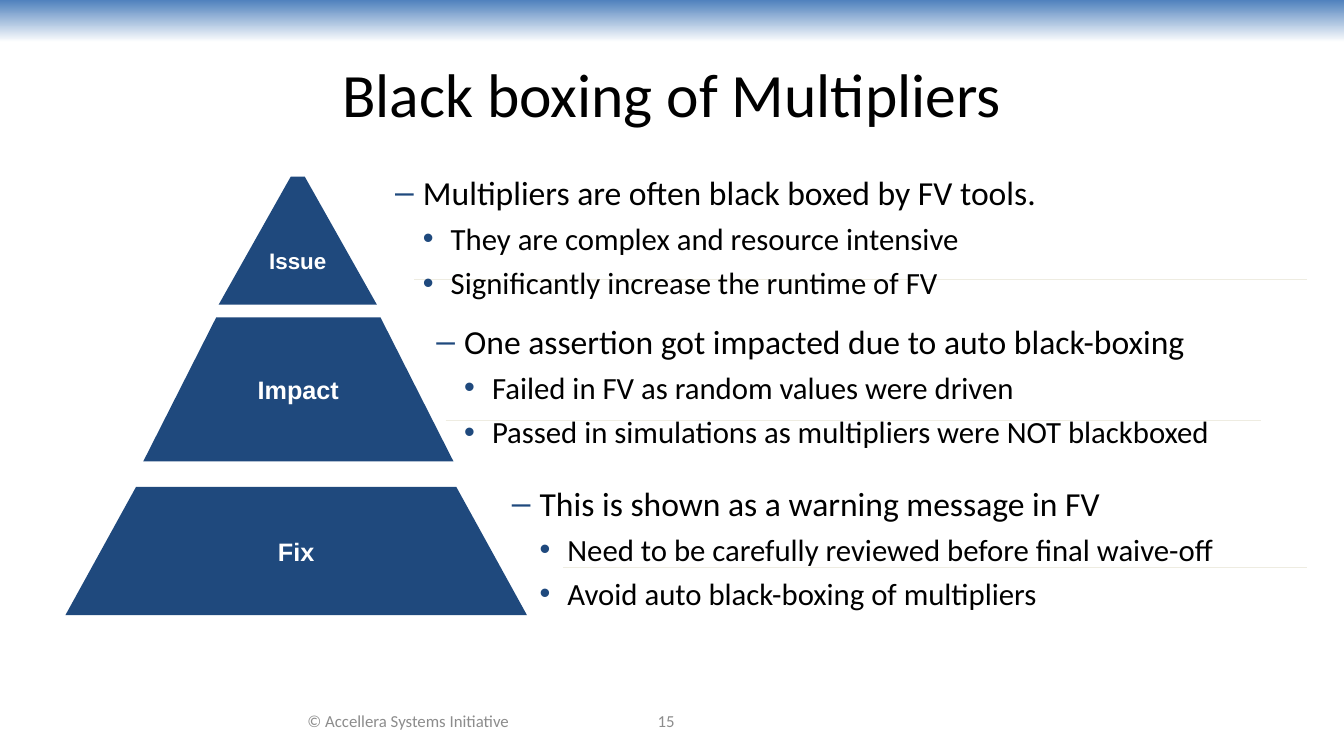
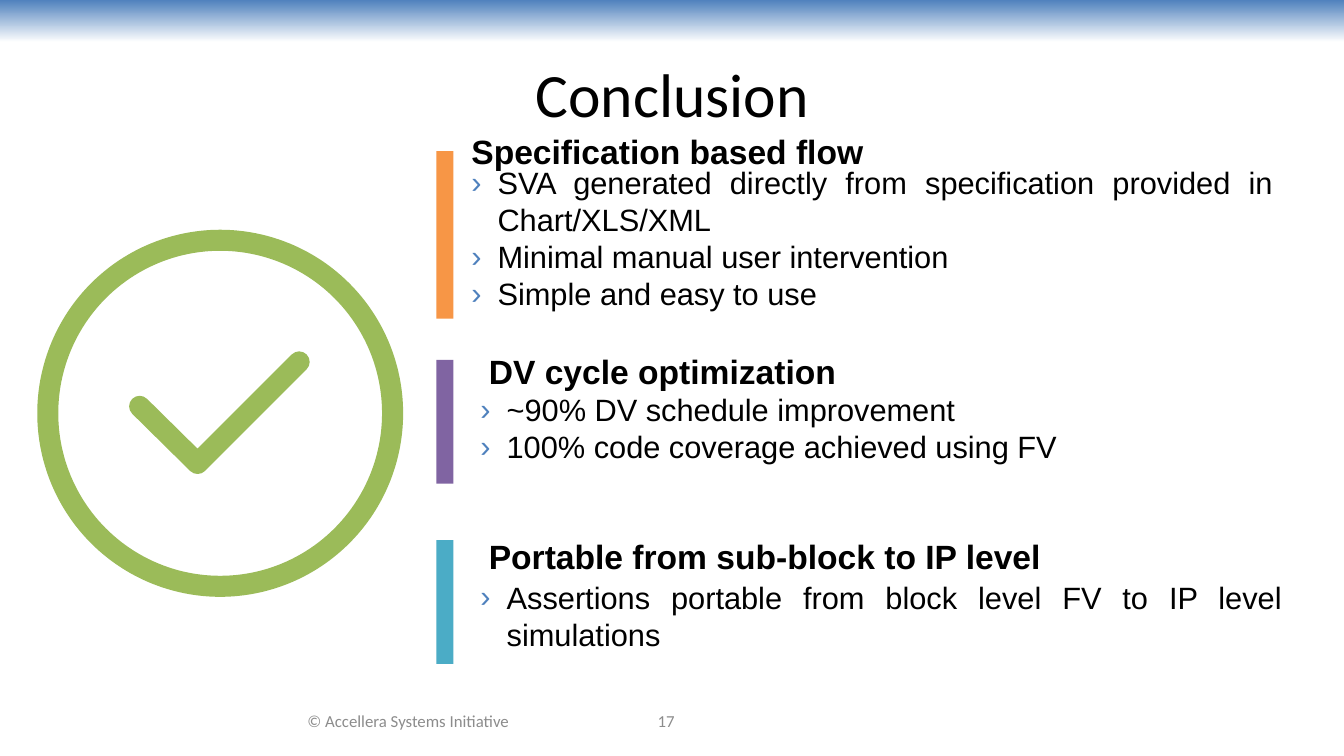
from lxml.etree import SubElement
from pptx import Presentation
from pptx.dml.color import RGBColor
from pptx.enum.shapes import MSO_CONNECTOR, MSO_SHAPE
from pptx.enum.text import MSO_ANCHOR as Anchor, PP_ALIGN as Align
from pptx.oxml.ns import qn
from pptx.util import Cm, Pt

BLACK = RGBColor(0x00, 0x00, 0x00)
WHITE = RGBColor(0xFF, 0xFF, 0xFF)
GREY = RGBColor(0x8C, 0x8C, 0x8C)
NAVY = RGBColor(0x1F, 0x49, 0x7D)
BLUE = RGBColor(0x4F, 0x81, 0xBD)
CREAM = RGBColor(0xEE, 0xEC, 0xE1)
GREEN = RGBColor(0x9B, 0xBB, 0x59)
ORANGE = RGBColor(0xF7, 0x96, 0x46)
PURPLE = RGBColor(0x80, 0x64, 0xA2)
TEAL = RGBColor(0x4B, 0xAC, 0xC6)

SLIDE_WIDTH, SLIDE_HEIGHT = 33.87, 19.05
HEADING_FONT, BODY_FONT = "Calibri", "Arial"

# Pyramid tiers: label, size, box, side inset, label centred on the whole tier
TIERS = [
    ("Issue", 16, (5.51, 4.45, 3.99, 3.23), 1.82, False),
    ("Impact", 18, (3.61, 8.0, 7.82, 3.63), 1.84, True),
    ("Fix", 18, (1.65, 12.27, 11.63, 3.23), 1.78, True),
]
# Rules behind the notes: left, right, height on the slide
RULES = [(10.44, 32.94, 7.04), (11.23, 31.78, 10.59), (14.2, 32.94, 14.3)]
# Notes: box, lead line, details
NOTES = [
    ((9.96, 4.24, 23.09, 3.23), "Multipliers are often black boxed by FV tools.",
     ["They are complex and resource intensive",
      "Significantly increase the runtime of FV"]),
    ((11.0, 8.0, 21.39, 3.23), "One assertion got impacted due to auto black-boxing",
     ["Failed in FV as random values were driven",
      "Passed in simulations as multipliers were NOT blackboxed"]),
    ((12.9, 12.07, 18.9, 3.23), "This is shown as a warning message in FV",
     ["Need to be carefully reviewed before final waive-off",
      "Avoid auto black-boxing of multipliers"]),
]
# Conclusions: bar box, colour, heading offset, list offset, heading, points
CONCLUSIONS = [
    ((11.0, 3.81, 0.43, 4.22), ORANGE, (0.63, -0.63), (0.63, 0.2),
     "Specification based flow",
     ["SVA generated directly from specification provided in Chart/XLS/XML",
      "Minimal manual user intervention", "Simple and easy to use"]),
    ((11.0, 9.07, 0.43, 3.12), PURPLE, (1.07, -0.36), (0.86, 0.66),
     "DV cycle optimization",
     ["~90% DV schedule improvement", "100% code coverage achieved using FV"]),
    ((11.0, 13.61, 0.43, 3.12), TEAL, (1.07, -0.22), (0.86, 0.84),
     "Portable from sub-block to IP level",
     ["Assertions portable from block level FV to IP level simulations"]),
]


def cm_box(box):
    return [Cm(length) for length in box]


def set_font(paragraph, name, size, color, bold=False):
    font = paragraph.font
    font.name, font.size, font.bold = name, Pt(size), bold
    font.color.rgb = color


def set_bullet(paragraph, character, color, indent, hanging):
    properties = paragraph._p.get_or_add_pPr()
    properties.set("marL", str(Cm(indent)))
    properties.set("indent", str(-Cm(hanging)))
    bullet_color = SubElement(properties, qn("a:buClr"))
    SubElement(bullet_color, qn("a:srgbClr")).set("val", str(color))
    SubElement(properties, qn("a:buFont")).set("typeface", BODY_FONT)
    SubElement(properties, qn("a:buChar")).set("char", character)


def add_frame(slide, box, anchor=Anchor.TOP):
    frame = slide.shapes.add_textbox(*cm_box(box)).text_frame
    frame.word_wrap = True
    frame.vertical_anchor = anchor
    return frame


def remove_margins(frame):
    frame.margin_left = frame.margin_right = 0
    frame.margin_top = frame.margin_bottom = 0


def add_paragraphs(frame, texts):
    """Write one paragraph per text and yield each for styling."""
    for index, text in enumerate(texts):
        paragraph = frame.add_paragraph() if index else frame.paragraphs[0]
        paragraph.text = text
        yield paragraph


def add_line_of_text(slide, box, text, style, align=Align.LEFT, anchor=Anchor.TOP):
    paragraph = add_frame(slide, box, anchor).paragraphs[0]
    paragraph.text = text
    paragraph.alignment = align
    set_font(paragraph, *style)


def add_filled(slide, preset, box, color):
    shape = slide.shapes.add_shape(preset, *cm_box(box))
    shape.shadow.inherit = False
    shape.fill.solid()
    shape.fill.fore_color.rgb = color
    shape.line.fill.background()
    return shape


def add_base_slide(presentation, title, number):
    """Blank slide with the top band, title and footer."""
    slide = presentation.slides.add_slide(presentation.slide_layouts[6])
    band = add_filled(slide, MSO_SHAPE.RECTANGLE, (0, 0, SLIDE_WIDTH, 1.07), BLUE)
    band.fill.gradient()
    band.fill.gradient_angle = 270
    for stop, color in zip(band.fill.gradient_stops, (BLUE, WHITE)):
        stop.color.rgb = color
    band.fill.gradient_stops[0].position = 0
    band.fill.gradient_stops[1].position = 1

    for box, text, size, color in [
        ((1.7, 0.76, 30.48, 3.18), title, 44, BLACK),
        ((13.54, 17.65, 6.5, 1.02), str(number), 12, GREY),
        ((6.2, 17.65, 8.18, 1.02), "© Accellera Systems Initiative", 12, GREY),
    ]:
        add_line_of_text(slide, box, text, (HEADING_FONT, size, color),
                         Align.CENTER, Anchor.MIDDLE)
    return slide


def add_tier(slide, label, size, box, inset, centred):
    width, height = box[2:]
    tier = add_filled(slide, MSO_SHAPE.TRAPEZOID, box, NAVY)
    tier.adjustments[0] = inset / min(width, height)
    frame = tier.text_frame
    remove_margins(frame)
    frame.word_wrap = False
    frame.vertical_anchor = Anchor.MIDDLE
    if centred:
        # Balance the top offset of the trapezoid's text area
        frame.margin_bottom = Cm(height * 2 * inset / width / 3)
    paragraph = frame.paragraphs[0]
    paragraph.text = label
    paragraph.alignment = Align.CENTER
    set_font(paragraph, BODY_FONT, size, WHITE, True)


def add_rule(slide, left, right, top):
    rule = slide.shapes.add_connector(MSO_CONNECTOR.STRAIGHT,
                                      *cm_box((left, top, right, top)))
    rule.line.color.rgb = CREAM
    rule.line.width = Pt(0.75)
    SubElement(rule._element.spPr, qn("a:effectLst"))


def add_note(slide, box, lead, details):
    frame = add_frame(slide, box, Anchor.MIDDLE)
    remove_margins(frame)
    for index, paragraph in enumerate(add_paragraphs(frame, [lead, *details])):
        level = min(index, 1)
        paragraph.level = level
        paragraph.line_spacing = 1.2
        set_bullet(paragraph, "‒•"[level], NAVY, 0.7 * (level + 1), 0.7)
        set_font(paragraph, HEADING_FONT, (24, 22)[level], BLACK)


def add_check_mark(slide, box):
    """Ring with a round-ended tick inside the box."""
    left, top, width, height = box
    stroke = 0.53
    ring = add_filled(slide, MSO_SHAPE.DONUT, box, GREEN)
    ring.adjustments[0] = stroke / min(width, height)

    start, *turns = [(Cm(left + x), Cm(top + y))
                     for x, y in [(2.58, 4.45), (4.04, 5.89), (6.6, 3.33)]]
    builder = slide.shapes.build_freeform(*start)
    builder.add_line_segments(turns, close=False)
    tick = builder.convert_to_shape()
    tick.shadow.inherit = False
    tick.fill.background()
    tick.line.color.rgb = GREEN
    tick.line.width = Cm(stroke)
    outline = tick.line._get_or_add_ln()
    outline.set("cap", "rnd")
    SubElement(outline, qn("a:round"))


def add_conclusion(slide, box, color, heading_offset, list_offset, heading, points):
    left, top, _, height = box
    text_width = 20.7
    add_filled(slide, MSO_SHAPE.RECTANGLE, box, color)
    dx, dy = heading_offset
    add_line_of_text(slide, (left + dx, top + dy, text_width, 1.27), heading,
                     (BODY_FONT, 24, BLACK, True))
    dx, dy = list_offset
    frame = add_frame(slide, (left + dx, top + dy, text_width, height - dy))
    for paragraph in add_paragraphs(frame, points):
        paragraph.alignment = Align.JUSTIFY
        set_bullet(paragraph, "›", BLUE, 0.66, 0.66)
        set_font(paragraph, BODY_FONT, 22, BLACK)


def build_pyramid_slide(presentation):
    slide = add_base_slide(presentation, "Black boxing of Multipliers", 15)
    for tier in TIERS:
        add_tier(slide, *tier)
    for rule in RULES:
        add_rule(slide, *rule)
    for note in NOTES:
        add_note(slide, *note)


def build_conclusion_slide(presentation):
    slide = add_base_slide(presentation, "Conclusion", 17)
    add_check_mark(slide, (0.94, 5.79, 9.22, 9.25))
    for conclusion in CONCLUSIONS:
        add_conclusion(slide, *conclusion)


def main():
    presentation = Presentation()
    presentation.slide_width = Cm(SLIDE_WIDTH)
    presentation.slide_height = Cm(SLIDE_HEIGHT)
    build_pyramid_slide(presentation)
    build_conclusion_slide(presentation)
    presentation.save("out.pptx")


if __name__ == "__main__":
    main()
